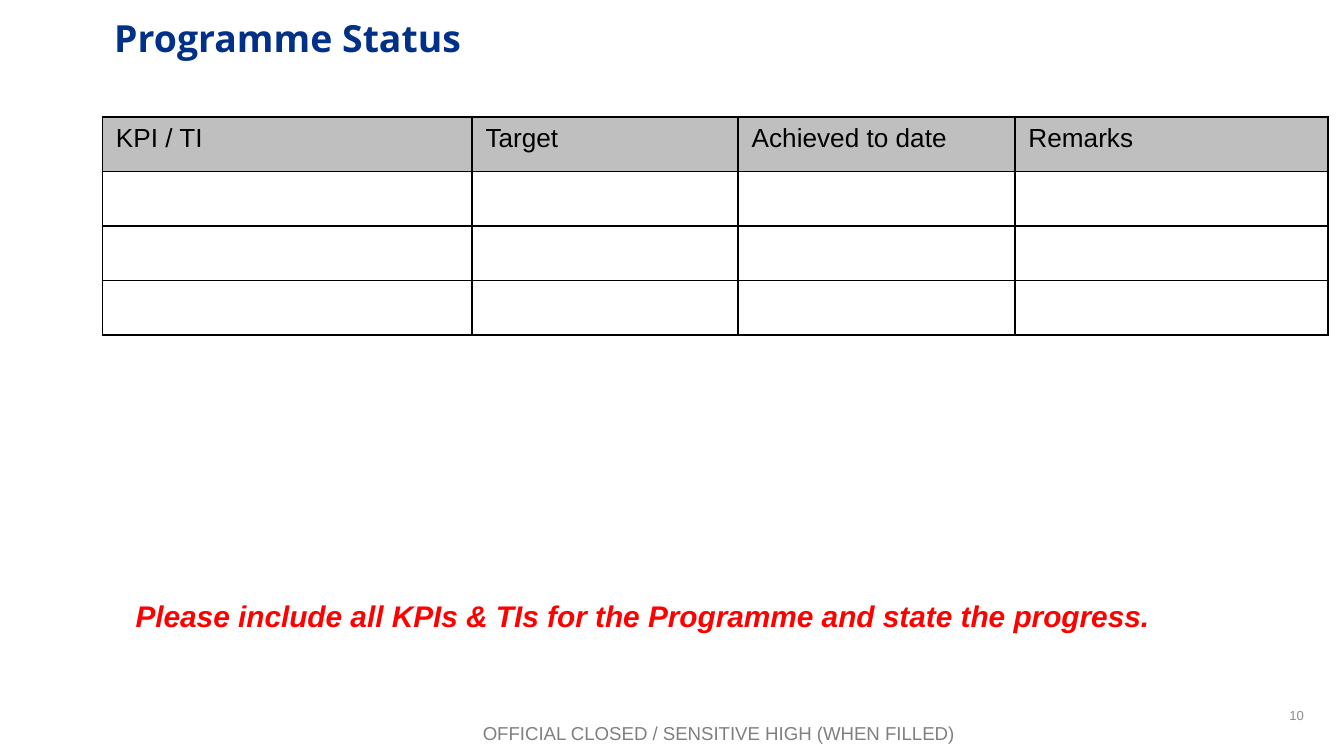
from dataclasses import dataclass

from lxml import etree
from pptx import Presentation
from pptx.dml.color import RGBColor
from pptx.enum import text
from pptx.oxml.ns import qn
from pptx.util import Pt


@dataclass(frozen=True)
class Style:
    size: float
    color: str
    font: str = "Arial"
    bold: bool = False
    italic: bool = False


@dataclass(frozen=True)
class Label:
    words: str
    box: tuple[float, float, float, float]
    style: Style
    align: text.PP_ALIGN = text.PP_ALIGN.LEFT
    anchor: text.MSO_ANCHOR = text.MSO_ANCHOR.TOP


@dataclass(frozen=True)
class Column:
    heading: str
    width: float


TITLE = Label("Programme Status", (54, 4.3, 623.5, 57),
              Style(20, "003087", "Open Sans", bold=True))
LABELS = [
    Label("10", (537.8, 372.2, 167.8, 21.6), Style(7, "8C8C8C"),
          text.PP_ALIGN.RIGHT, text.MSO_ANCHOR.MIDDLE),
    Label("OFFICIAL CLOSED / SENSITIVE HIGH (WHEN FILLED)",
          (49, 383, 671.8, 19.4), Style(10, "808080"), text.PP_ALIGN.CENTER),
    Label("Please include all KPIs & TIs for the Programme and state the progress.",
          (65.5, 316.8, 584.6, 26.6), Style(16, "FF0000", bold=True, italic=True)),
]
COLUMNS = [Column("KPI / TI", 198), Column("Target", 142.6),
           Column("Achieved to date", 148.3), Column("Remarks", 167.8)]
BODY_ROWS = 3
ROW_HEIGHT = 29.2
CELL_STYLE = Style(14, "000000")


def rgb(color: str) -> RGBColor:
    return RGBColor.from_string(color)


def format_font(font, style: Style) -> None:
    font.name = style.font
    font.size = Pt(style.size)
    font.bold = style.bold
    font.italic = style.italic
    font.color.rgb = rgb(style.color)


def write(sp, label: Label) -> None:
    """Place a text shape and fill it with the label's words."""
    sp.left, sp.top, sp.width, sp.height = (Pt(v) for v in label.box)
    tf = sp.text_frame
    tf.word_wrap = True
    tf.auto_size = text.MSO_AUTO_SIZE.NONE
    tf.vertical_anchor = label.anchor
    p = tf.paragraphs[0]
    p.alignment = label.align
    r = p.add_run()
    r.text = label.words
    format_font(r.font, label.style)


def set_borders(cell, color: str, width: float) -> None:
    """Draw all four sides; borders must precede the fill in tcPr."""
    tc_pr = cell._tc.get_or_add_tcPr()
    for i, side in enumerate(("lnL", "lnR", "lnT", "lnB")):
        ln = etree.Element(qn(f"a:{side}"), w=str(Pt(width)))
        fill = etree.SubElement(ln, qn("a:solidFill"))
        etree.SubElement(fill, qn("a:srgbClr"), val=color)
        tc_pr.insert(i, ln)


def add_kpi_table(s, left: float, top: float) -> None:
    n_rows = BODY_ROWS + 1
    width = sum(c.width for c in COLUMNS)
    table = s.shapes.add_table(n_rows, len(COLUMNS), Pt(left), Pt(top),
                               Pt(width), Pt(n_rows * ROW_HEIGHT)).table
    for row in table.rows:
        row.height = Pt(ROW_HEIGHT)
    for i, column in enumerate(COLUMNS):
        table.columns[i].width = Pt(column.width)
        for j in range(n_rows):
            cell = table.cell(j, i)
            cell.fill.solid()
            cell.fill.fore_color.rgb = rgb("FFFFFF" if j else "BFBFBF")
            set_borders(cell, "000000", 1)
        r = table.cell(0, i).text_frame.paragraphs[0].add_run()
        r.text = column.heading
        format_font(r.font, CELL_STYLE)


def main() -> None:
    prs = Presentation()
    prs.slide_width, prs.slide_height = Pt(720), Pt(405)
    s = prs.slides.add_slide(prs.slide_layouts[5])
    write(s.shapes.title, TITLE)
    add_kpi_table(s, 54.9, 62.7)
    for label in LABELS:
        write(s.shapes.add_textbox(0, 0, 0, 0), label)
    prs.save("out.pptx")


if __name__ == "__main__":
    main()
